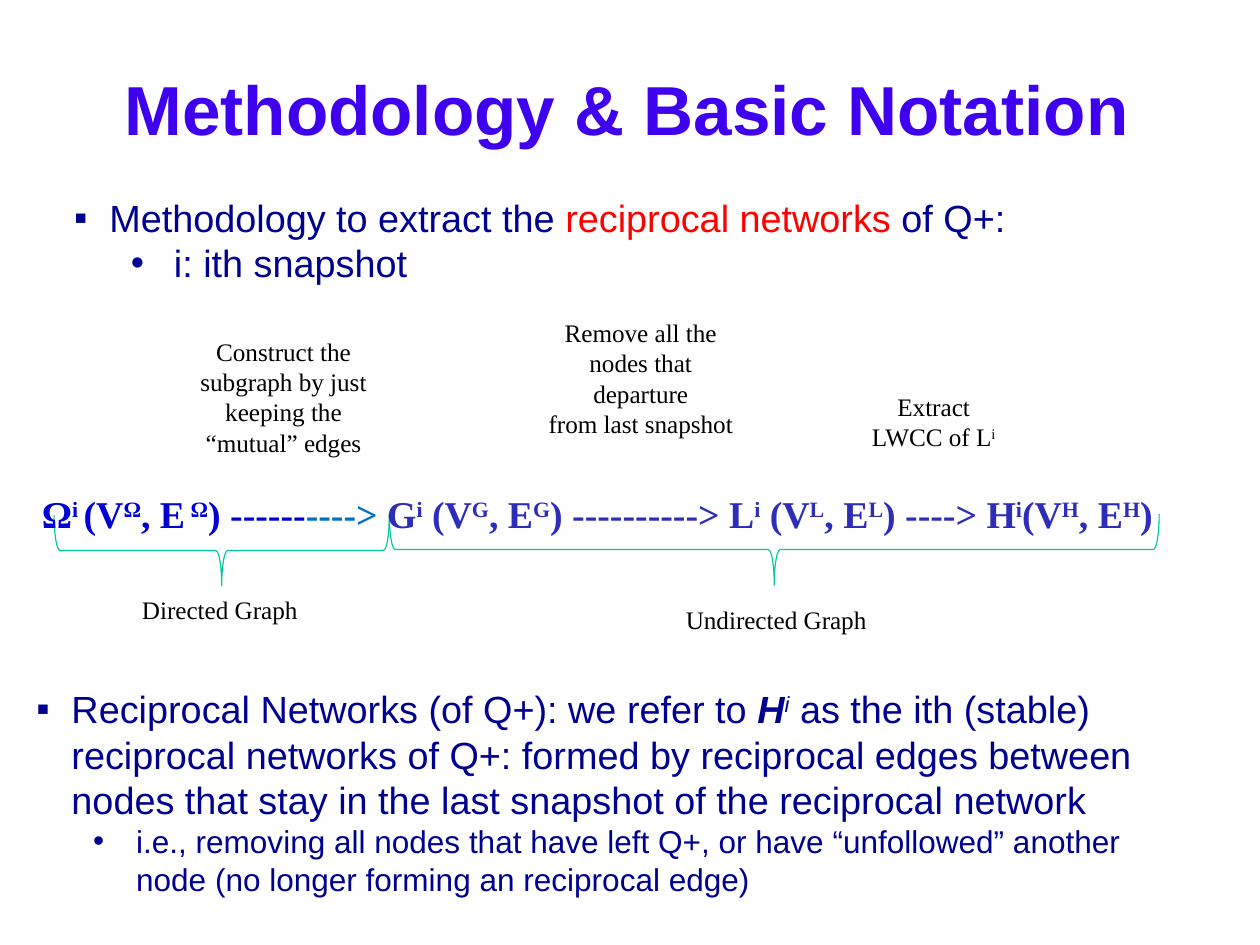
from lxml.etree import SubElement
from pptx import Presentation
from pptx.dml.color import RGBColor
from pptx.enum.shapes import MSO_SHAPE
from pptx.enum.text import MSO_ANCHOR, PP_ALIGN
from pptx.oxml.ns import qn
from pptx.util import Inches, Pt

SANS, SERIF = "Arial", "Times New Roman"
NAVY, BLUE, INDIGO = "000090", "0000D5", "2D2DB9"


def colour(value):
    return RGBColor.from_string(value)


class NotationPage:
    """Draws on one slide; lengths are percentages of the slide's size."""

    def __init__(self, deck):
        self.width, self.height = deck.slide_width, deck.slide_height
        self.page = deck.slides.add_slide(deck.slide_layouts[6])

    def across(self, share):
        return round(self.width * share / 100)

    def down(self, share):
        return round(self.height * share / 100)

    def box(self, left, top, width, height, anchor=MSO_ANCHOR.TOP):
        shape = self.page.shapes.add_textbox(
            self.across(left), self.down(top), self.across(width), self.down(height))
        frame = shape.text_frame
        frame.word_wrap = True
        frame.vertical_anchor = anchor
        return frame

    def para(self, frame, spans, align=PP_ALIGN.LEFT, bullet=None, level=0, **style):
        first = frame.paragraphs[0]
        para = frame.add_paragraph() if first.runs else first
        para.alignment = align
        if bullet:
            self.bullet(para, bullet, level)
        for text, changes in spans:
            self.span(para, text, **{**style, **changes})
        return para

    def bullet(self, para, symbol, level):
        margin, indent = ((0.31, -0.31), (0.88, -0.38))[level]
        para.level = level
        properties = para._p.get_or_add_pPr()
        properties.set("marL", str(Inches(margin)))
        properties.set("indent", str(Inches(indent)))
        SubElement(properties, qn("a:buFont"), typeface=SANS)
        SubElement(properties, qn("a:buChar"), char=symbol)

    def span(self, para, text, font=SANS, size=24, ink=NAVY, bold=False, italic=False):
        """Adds runs; parts between carets are raised."""
        for index, part in enumerate(text.split("^")):
            if not part:
                continue
            run = para.add_run()
            run.text = part
            run.font.name, run.font.size = font, Pt(size)
            run.font.bold, run.font.italic = bold, italic
            run.font.color.rgb = colour(ink)
            if index % 2:
                run._r.get_or_add_rPr().set("baseline", "30000")

    def label(self, place, *lines):
        frame = self.box(*place)
        for line in lines:
            self.para(frame, [(line, {})], PP_ALIGN.CENTER,
                      font=SERIF, size=16, ink="000000")

    def brace(self, left, top, width, depth):
        span, drop = self.across(width), self.down(depth)
        middle_x = self.across(left) + span // 2
        middle_y = self.down(top) + drop // 2
        shape = self.page.shapes.add_shape(
            MSO_SHAPE.LEFT_BRACE, middle_x - drop // 2, middle_y - span // 2, drop, span)
        shape.rotation = 270
        shape.shadow.inherit = False
        shape.fill.background()
        shape.line.color.rgb = colour("00C896")
        shape.line.width = Pt(0.75)


def main():
    deck = Presentation()
    deck.slide_width, deck.slide_height = Inches(11.11), Inches(8.33)
    page = NotationPage(deck)

    title = page.box(7.3, 3, 85, 16.7, MSO_ANCHOR.MIDDLE)
    page.para(title, [("Methodology & Basic Notation", {})], PP_ALIGN.CENTER,
              size=44, ink="3F00F0", bold=True)

    page.brace(4.3, 54.5, 26.6, 7.5)
    page.brace(30.9, 54.4, 61.1, 7.5)

    page.label((5.2, 62.3, 24.5, 4.4), "Directed Graph")
    page.label((49, 63.4, 25.2, 4.4), "Undirected Graph")
    page.label((9.5, 35, 26, 14.2), "Construct the", "subgraph by just",
               "keeping the", "“mutual” edges")
    page.label((40.2, 33, 21.3, 14.2), "Remove all the", "nodes that",
               "departure", "from last snapshot")
    page.label((64.7, 40.8, 18.8, 7.7), "Extract", "LWCC of L^i^")

    notation = page.para(page.box(0.2, 51.9, 94.4, 19.2), [
        ("Ω^i ^(V^Ω^, E^ Ω^) ------", {}),
        ("----> ", {"ink": "0070C0"}),
        ("G^i^ (V^G^, E^G^) ----------> L^i^ (V^L^, E^L^) ----> H^i^(V^H^, E^H^)",
         {"ink": INDIGO}),
    ], PP_ALIGN.CENTER, font=SERIF, ink=BLUE, bold=True)
    notation.line_spacing = 0.9

    method = page.box(5, 20, 82.3, 10.9)
    page.para(method, [
        ("Methodology to extract the ", {}),
        ("reciprocal networks ", {"ink": "FF0000"}),
        ("of Q+:", {}),
    ], bullet="▪")
    page.para(method, [("i: ith snapshot", {})], bullet="•", level=1)

    definition = page.box(2, 72, 92.3, 23.9)
    page.para(definition, [
        ("Reciprocal Networks (of Q+): we refer to ", {}),
        ("H", {"bold": True, "italic": True}),
        ("^i^", {"italic": True}),
        (" as the ith (stable) reciprocal networks of Q+: formed by reciprocal edges "
         "between nodes that stay in the last snapshot of the reciprocal network", {}),
    ], bullet="▪")
    page.para(definition, [
        ("i.e., removing all nodes that have left Q+, or have “unfollowed” another "
         "node (no longer forming an reciprocal edge)", {}),
    ], bullet="•", level=1, size=20)

    deck.save("out.pptx")


if __name__ == "__main__":
    main()
